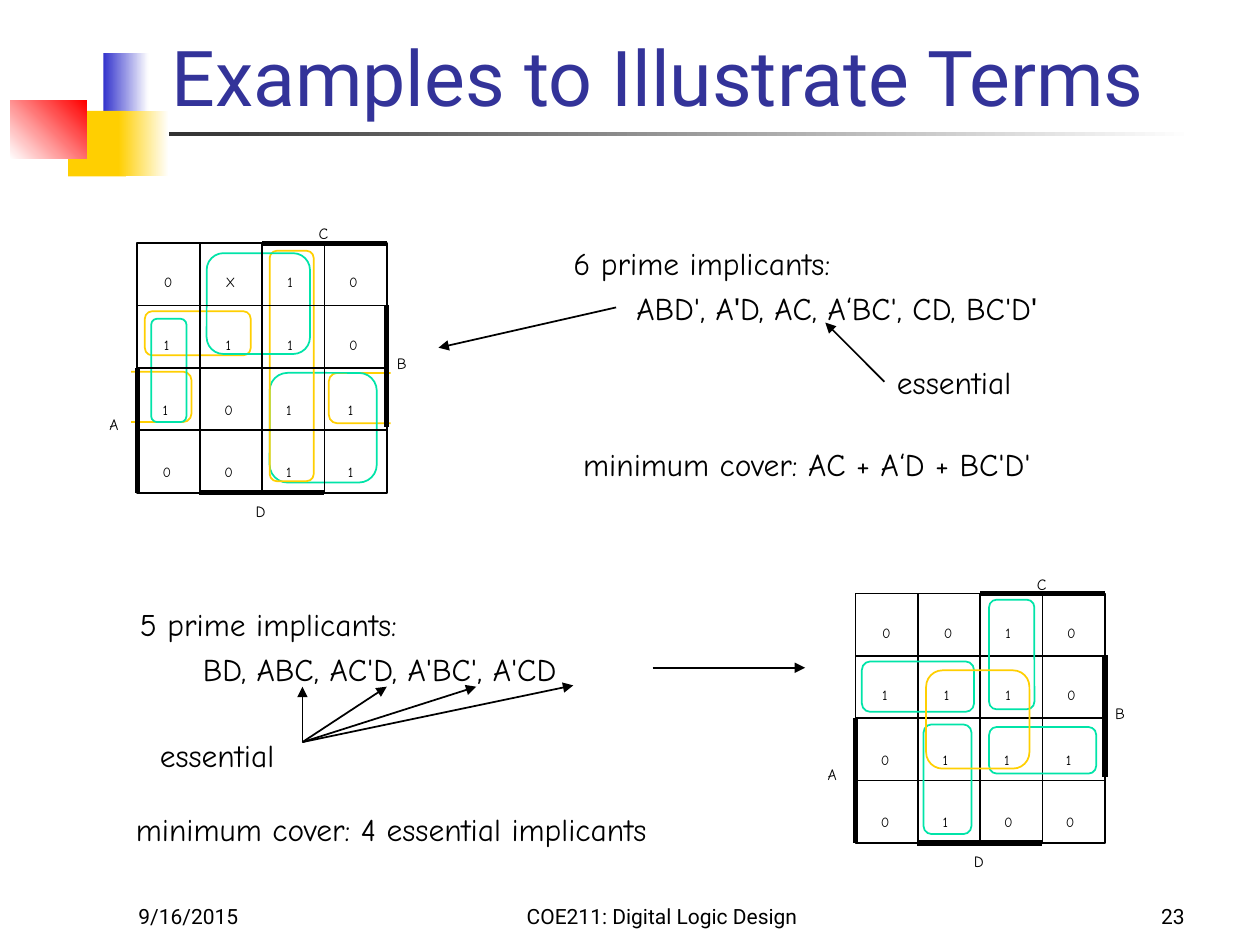
from dataclasses import dataclass

from lxml import etree
from pptx import Presentation
from pptx.dml.color import RGBColor
from pptx.enum.shapes import MSO_CONNECTOR, MSO_SHAPE
from pptx.enum.text import MSO_ANCHOR, MSO_AUTO_SIZE, PP_ALIGN
from pptx.oxml.ns import qn
from pptx.util import Inches, Pt

RECTANGLE = MSO_SHAPE.RECTANGLE
ROUNDED = MSO_SHAPE.ROUNDED_RECTANGLE
STRAIGHT = MSO_CONNECTOR.STRAIGHT
TOP, BOTTOM = MSO_ANCHOR.TOP, MSO_ANCHOR.BOTTOM
LEFT, CENTER, RIGHT = PP_ALIGN.LEFT, PP_ALIGN.CENTER, PP_ALIGN.RIGHT

BLACK, WHITE, GOLD, GREEN = "000000", "FFFFFF", "FFCF01", "00E4A8"
HAND, SANS, PRIME = "Comic Neue", "Roboto", "Arial"
NARROW, WIDE = (0.02, 0.03), (0.1, 0.05)  # text margins: sides, top and bottom
HALF, CELL = 0.99, 0.49  # size of a map quadrant, pitch of its cells


@dataclass
class TextStyle:
    size: float
    font: str = HAND
    margins: tuple = WIDE
    line_pitch: float = 0
    space_before: float = 0
    tab: float = 0
    align: int = LEFT
    anchor: int = TOP


@dataclass
class Loop:
    left: float
    top: float
    width: float
    height: float
    color: str


@dataclass
class KarnaughMap:
    left: float
    top: float
    rows: tuple


CELL_STYLE = TextStyle(8, margins=NARROW, line_pitch=17.8, space_before=17.8, tab=CELL)
LABEL_STYLE = TextStyle(9, margins=NARROW, line_pitch=15.8)
SIDE_LABEL_STYLE = TextStyle(9)
LIST_STYLE = TextStyle(18, margins=NARROW, line_pitch=25.6, tab=0.5)
NOTE_STYLE = TextStyle(18)


def rgb(value: str) -> RGBColor:
    return RGBColor.from_string(value)


def add_box(slide, kind, left, top, width, height, fill=None, line=None, angle=0):
    """Add a shape; a pair of fill colours makes a gradient."""
    shape = slide.shapes.add_shape(kind, Inches(left), Inches(top), Inches(width), Inches(height))
    shape.shadow.inherit = False
    if fill is None:
        shape.fill.background()
    elif isinstance(fill, tuple):
        shape.fill.gradient()
        shape.fill.gradient_angle = angle
        for stop, color in zip(shape.fill.gradient_stops, fill):
            stop.color.rgb = rgb(color)
    else:
        shape.fill.solid()
        shape.fill.fore_color.rgb = rgb(fill)
    if line:
        shape.line.color.rgb = rgb(line)
        shape.line.width = Pt(1)
    else:
        shape.line.fill.background()
    return shape


def add_line(slide, start: tuple, end: tuple, width: float = 1, arrow: bool = False):
    line = slide.shapes.add_connector(STRAIGHT, *(Inches(value) for value in start + end))
    line.line.color.rgb = rgb(BLACK)
    line.line.width = Pt(width)
    properties = line._element.spPr
    if arrow:
        etree.SubElement(properties.find(qn("a:ln")), qn("a:tailEnd"), type="triangle")
    etree.SubElement(properties, qn("a:effectLst"))
    return line


def add_text(slide, left, top, width, height, paragraphs: list, style: TextStyle):
    """Add a text box; a paragraph is a string, or runs that alternate with PRIME font."""
    box = slide.shapes.add_textbox(Inches(left), Inches(top), Inches(width), Inches(height))
    frame = box.text_frame
    frame.word_wrap = True
    frame.vertical_anchor = style.anchor
    frame.margin_left = frame.margin_right = Inches(style.margins[0])
    frame.margin_top = frame.margin_bottom = Inches(style.margins[1])
    for index, content in enumerate(paragraphs):
        paragraph = frame.add_paragraph() if index else frame.paragraphs[0]
        paragraph.alignment = style.align
        if style.line_pitch:
            paragraph.line_spacing = Pt(style.line_pitch)
        if index and style.space_before:
            paragraph.space_before = Pt(style.space_before)
        if style.tab:
            tabs = etree.SubElement(paragraph._p.get_or_add_pPr(), qn("a:tabLst"))
            etree.SubElement(tabs, qn("a:tab"), pos=str(Inches(style.tab)), algn="l")
        runs = (content,) if isinstance(content, str) else content
        for position, text in enumerate(runs):
            run = paragraph.add_run()
            run.text = text
            run.font.size = Pt(style.size)
            run.font.name = PRIME if position % 2 else style.font
            run.font.color.rgb = rgb(BLACK)
    return box


def add_loops(slide, loops: list) -> None:
    for loop in loops:
        add_box(slide, ROUNDED, loop.left, loop.top, loop.width, loop.height, line=loop.color)


def add_map(slide, karnaugh: KarnaughMap) -> None:
    left, top = karnaugh.left, karnaugh.top
    # Four quadrants, each split by a cross and holding two rows of two values
    for row in range(2):
        for column in range(2):
            quadrant = add_box(slide, RECTANGLE, left + column * HALF, top + row * HALF,
                               HALF, HALF, line=BLACK)
            for first, last in ((0, 2), (3, 1)):
                divider = add_line(slide, (left, top), (left + HALF, top + HALF))
                divider.begin_connect(quadrant, first)
                divider.end_connect(quadrant, last)
            values = ["\t".join(line[2 * column:2 * column + 2])
                      for line in karnaugh.rows[2 * row:2 * row + 2]]
            add_text(slide, left + 0.19 - 0.01 * row + 0.98 * column, top + 0.1 + 1.01 * row,
                     0.89, 0.88, values, CELL_STYLE)
    # Thick edges mark where each variable is true
    far = 2 * HALF
    for x1, y1, x2, y2 in ((HALF, 0, far, 0), (far, CELL, far, 1.46),
                           (CELL, far, 1.48, far), (0, HALF, 0, far)):
        add_line(slide, (left + x1, top + y1), (left + x2, top + y2), 3)
    for name, x, y in (("B", 2.04, 0.78), ("C", 1.42, -0.25), ("D", 0.92, 1.95)):
        add_text(slide, left + x, top + y, 0.63, 0.36, [name], LABEL_STYLE)
    add_text(slide, left - 0.32, top + 1.31, 0.29, 0.25, ["A"], SIDE_LABEL_STYLE)


def add_frame(slide) -> None:
    # Decorative bars and squares
    add_box(slide, RECTANGLE, 0.48, 1.05, 9, 0.03, ("1C1C1C", WHITE))
    add_box(slide, RECTANGLE, 0.82, 0.42, 0.36, 0.52, ("3333CC", WHITE))
    add_box(slide, RECTANGLE, 0.54, 0.88, 0.46, 0.52, GOLD)
    add_box(slide, RECTANGLE, 0.94, 0.88, 0.4, 0.52, (GOLD, WHITE))
    add_box(slide, RECTANGLE, 0.08, 0.8, 0.61, 0.46, (WHITE, "FF0000"), angle=45)
    # Title
    title = slide.shapes.title
    title.left, title.top, title.width, title.height = map(Inches, (1.26, 0.08, 8.52, 0.94))
    frame = title.text_frame
    frame.text = "Examples to Illustrate Terms"
    frame.auto_size = MSO_AUTO_SIZE.NONE
    frame.vertical_anchor = BOTTOM
    paragraph = frame.paragraphs[0]
    paragraph.alignment = LEFT
    font = paragraph.runs[0].font
    font.size, font.name, font.color.rgb = Pt(44), SANS, rgb("333399")
    # Footer
    for text, left, width, align in (("9/16/2015", 1, 2.08, LEFT),
                                     ("COE211: Digital Logic Design", 3.67, 3.17, CENTER),
                                     ("23", 7.42, 2.08, RIGHT)):
        add_text(slide, left, 6.92, width, 0.5, [text],
                 TextStyle(12, SANS, align=align, anchor=BOTTOM))


def add_first_example(slide) -> None:
    # Wrap-around loop: two boxes with their outer ends hidden
    add_loops(slide, [Loop(0.91, 2.95, 0.61, 0.4, GOLD), Loop(2.61, 2.96, 0.61, 0.4, GOLD)])
    for left, top in ((0.81, 2.92), (3.1, 2.93)):
        add_box(slide, RECTANGLE, left, top, 0.23, 0.49, WHITE)
    add_loops(slide, [Loop(2.14, 2.96, 0.85, 0.87, GREEN), Loop(2.14, 1.99, 0.35, 1.83, GOLD),
                      Loop(1.15, 2.47, 0.84, 0.35, GOLD), Loop(1.64, 2.01, 0.82, 0.8, GREEN),
                      Loop(1.2, 2.53, 0.28, 0.82, GREEN)])
    add_map(slide, KarnaughMap(1.09, 1.93, ("0X10", "1110", "1011", "0011")))
    add_text(slide, 4.53, 1.85, 4.82, 0.73,
             ["6 prime implicants:", ("\tABD', A", "'", "D, AC, A‘BC', CD, BC'D", "'")], LIST_STYLE)
    add_line(slide, (4.89, 2.44), (3.48, 2.76), arrow=True)
    essential = add_text(slide, 7.02, 2.83, 1.24, 0.4, ["essential"], NOTE_STYLE)
    add_line(slide, (7.02, 3.03), (6.55, 2.56), arrow=True).begin_connect(essential, 1)
    add_text(slide, 4.53, 3.48, 4.39, 0.4, ["minimum cover: AC + A‘D + BC'D'"], NOTE_STYLE)


def add_second_example(slide) -> None:
    add_map(slide, KarnaughMap(6.79, 4.71, ("0010", "1110", "0111", "0100")))
    add_loops(slide, [Loop(7.85, 4.76, 0.36, 0.87, GREEN), Loop(6.84, 5.25, 0.89, 0.4, GREEN),
                      Loop(7.33, 5.75, 0.38, 0.87, GREEN), Loop(7.85, 5.77, 0.85, 0.37, GREEN),
                      Loop(7.35, 5.32, 0.82, 0.78, GOLD)])
    add_text(slide, 1.09, 4.72, 4.82, 0.75,
             ["5 prime implicants:", "\tBD, ABC, AC'D, A'BC', A'CD"], LIST_STYLE)
    add_line(slide, (5.18, 5.3), (6.39, 5.3), arrow=True)
    # Fan of arrows to the essential implicants
    add_text(slide, 1.17, 5.79, 1.24, 0.4, ["essential"], NOTE_STYLE)
    for tip in ((2.4, 5.45), (3.07, 5.45), (3.78, 5.45), (4.55, 5.44)):
        add_line(slide, (2.4, 5.89), tip, arrow=True)
    add_text(slide, 0.98, 6.38, 4.58, 0.4, ["minimum cover: 4 essential implicants"], NOTE_STYLE)


def main() -> None:
    presentation = Presentation()
    presentation.slide_width, presentation.slide_height = Inches(10), Inches(7.5)
    slide = presentation.slides.add_slide(presentation.slide_layouts[5])
    add_frame(slide)
    add_first_example(slide)
    add_second_example(slide)
    presentation.save("out.pptx")


if __name__ == "__main__":
    main()
